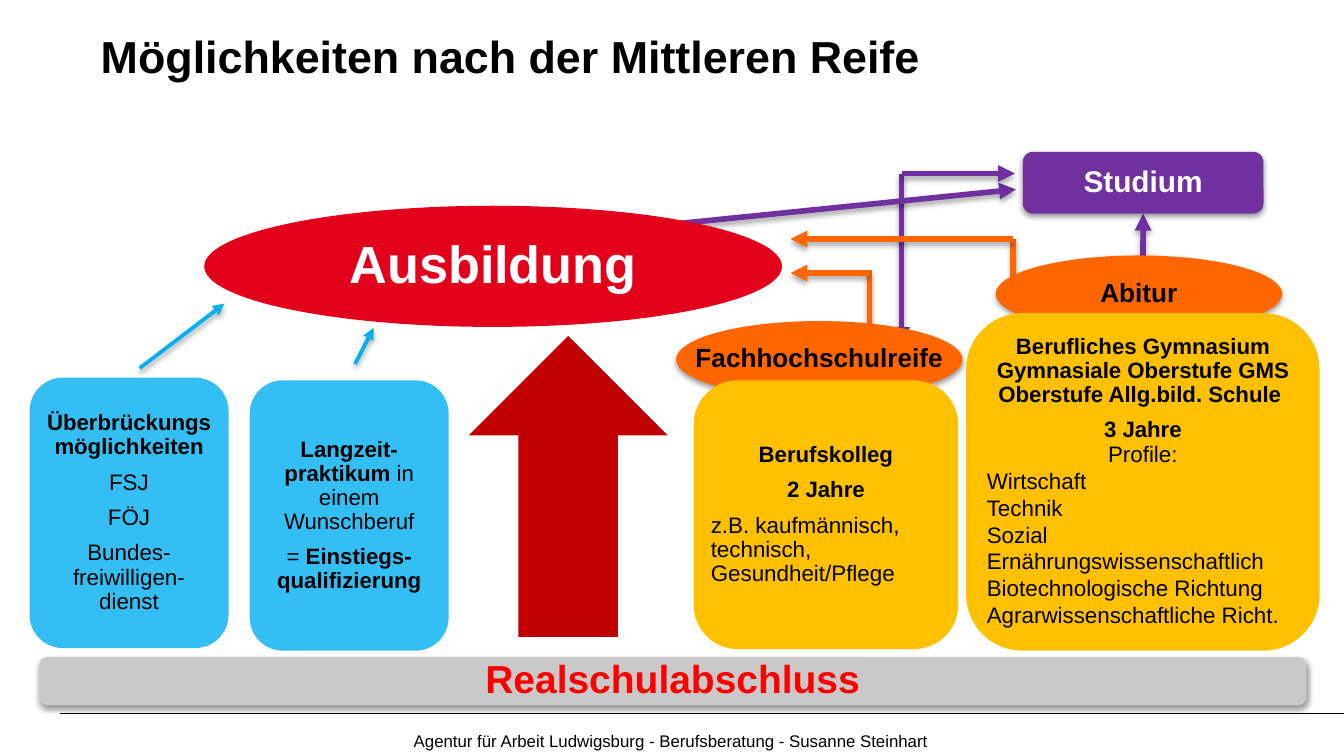
from lxml import etree
from pptx import Presentation
from pptx import util as u
from pptx.dml import color
from pptx.enum import shapes, text
from pptx.oxml import ns

BLACK = color.RGBColor(0x00, 0x00, 0x00)
WHITE = color.RGBColor(0xFF, 0xFF, 0xFF)
RED = color.RGBColor(0xFF, 0x00, 0x00)
CRIMSON = color.RGBColor(0xE2, 0x00, 0x1A)
DARK_RED = color.RGBColor(0xC0, 0x00, 0x00)
PURPLE = color.RGBColor(0x70, 0x30, 0xA0)
ORANGE = color.RGBColor(0xFF, 0x66, 0x00)
AMBER = color.RGBColor(0xFF, 0xC0, 0x00)
BLUE = color.RGBColor(0x00, 0xB0, 0xF0)
GREY = color.RGBColor(0xC9, 0xC9, 0xC9)

OVAL = shapes.MSO_SHAPE.OVAL
ROUNDED = shapes.MSO_SHAPE.ROUNDED_RECTANGLE
UP_ARROW = shapes.MSO_SHAPE.UP_ARROW
LEFT = text.PP_ALIGN.LEFT
CENTER = text.PP_ALIGN.CENTER


def write(tf, words, size=12, bold=False, rgb=BLACK, align=CENTER,
          spacing=0.9, before=6, after=0, join=False):
    first = len(tf.paragraphs) == 1 and not tf.paragraphs[0].runs
    p = tf.paragraphs[-1] if first or join else tf.add_paragraph()
    if not join:
        p.alignment = align
        p.line_spacing = spacing
        p.space_before = u.Pt(0 if first else before)
        p.space_after = u.Pt(after)
    for i, line in enumerate(words.split("\n")):
        if i:
            p.add_line_break()
        if line:
            r = p.add_run()
            r.text = line
            r.font.name = "Arial"
            r.font.size = u.Pt(size)
            r.font.bold = bold
            r.font.color.rgb = rgb


class Deck:
    def __init__(self, width, height):
        self.prs = Presentation()
        self.prs.slide_width = u.Cm(width)
        self.prs.slide_height = u.Cm(height)
        self.slide = self.prs.slides.add_slide(self.prs.slide_layouts[5])

    def title(self, words, x, y, w, h):
        sp = self.slide.shapes.title
        sp.left, sp.top, sp.width, sp.height = map(u.Cm, (x, y, w, h))
        tf = sp.text_frame
        tf.auto_size = text.MSO_AUTO_SIZE.NONE
        tf.vertical_anchor = text.MSO_ANCHOR.TOP
        write(tf, words, size=24, bold=True, align=LEFT, spacing=1, after=3.7)

    def label(self, words, x, y, w, h, size):
        sp = self.slide.shapes.add_textbox(*map(u.Cm, (x, y, w, h)))
        tf = sp.text_frame
        tf.word_wrap = True
        tf.vertical_anchor = text.MSO_ANCHOR.MIDDLE
        write(tf, words, size=size, align=LEFT, spacing=1)

    def shadow(self, effects, alpha, dist):
        shade = etree.SubElement(
            effects, ns.qn("a:outerShdw"), blurRad=str(u.Pt(3.1)),
            dist=str(u.Pt(dist)), dir="5400000", rotWithShape="0")
        rgb = etree.SubElement(shade, ns.qn("a:srgbClr"), val=str(BLACK))
        etree.SubElement(rgb, ns.qn("a:alpha"), val=str(alpha * 1000))

    def shape(self, kind, x, y, w, h, fill, alpha=100, shadow=False,
              inset=0.08, wrap=True):
        s = self.slide.shapes.add_shape(kind, *map(u.Cm, (x, y, w, h)))
        s.fill.solid()
        s.fill.fore_color.rgb = fill
        s.line.fill.background()
        s.shadow.inherit = False
        if alpha < 100:
            rgb = s.element.spPr.find(".//" + ns.qn("a:srgbClr"))
            etree.SubElement(rgb, ns.qn("a:alpha"), val=str(alpha * 1000))
        if shadow:
            self.shadow(s.element.spPr.find(ns.qn("a:effectLst")), 38, 1.6)
        tf = s.text_frame
        tf.word_wrap = wrap
        tf.vertical_anchor = text.MSO_ANCHOR.MIDDLE
        tf.margin_left = tf.margin_right = u.Cm(inset)
        tf.margin_top = tf.margin_bottom = u.Cm(inset)
        return s

    def banner(self, words, kind, x, y, w, h, fill, size, rgb=BLACK,
               shadow=True):
        s = self.shape(kind, x, y, w, h, fill, shadow=shadow, inset=0,
                       wrap=False)
        write(s.text_frame, words, size=size, bold=True, rgb=rgb)
        return s

    def line(self, x1, y1, x2, y2, rgb, width, arrow=True):
        c = self.slide.shapes.add_connector(
            shapes.MSO_CONNECTOR.STRAIGHT, *map(u.Cm, (x1, y1, x2, y2)))
        c.line.color.rgb = rgb
        c.line.width = u.Pt(width)
        props = c.element.spPr
        effects = etree.SubElement(props, ns.qn("a:effectLst"))
        if arrow:
            etree.SubElement(props.find(ns.qn("a:ln")), ns.qn("a:tailEnd"),
                             type="triangle")
            self.shadow(effects, 35, 1.8)
        return c


def main():
    d = Deck(25.4, 14.29)
    d.line(1.14, 13.49, 25.4, 13.49, BLACK, 0.5, arrow=False)

    d.line(17.04, 3.28, 17.04, 6.5, PURPLE, 3)
    d.line(12.4, 4.27, 19.2, 3.58, PURPLE, 3)
    to_studium = d.line(21.6, 5.36, 21.6, 4.04, PURPLE, 3)
    d.line(19.15, 4.52, 19.15, 5.77, ORANGE, 3)
    d.line(16.43, 5.11, 16.43, 6.58, ORANGE, 3)

    d.banner("Fachhochschulreife", OVAL, 12.78, 6.07, 5.41, 1.45, ORANGE, 14)
    d.banner("Abitur", OVAL, 18.82, 4.83, 5.41, 1.45, ORANGE, 14)
    d.banner("Ausbildung", OVAL, 3.86, 3.89, 10.92, 2.29, CRIMSON, 28,
             rgb=WHITE, shadow=False)

    tf = d.shape(ROUNDED, 13.11, 7.19, 5, 5.08, AMBER).text_frame
    write(tf, "Berufskolleg", size=11.9, bold=True)
    write(tf, "2 Jahre", size=11.9, bold=True)
    write(tf, "z.B. kaufmännisch, technisch, Gesundheit/Pflege", align=LEFT)

    studium = d.banner("Studium", ROUNDED, 19.33, 2.87, 4.55, 1.17, PURPLE,
                       16, rgb=WHITE)
    to_studium.end_connect(studium, 2)
    d.banner("Realschulabschluss", ROUNDED, 0.74, 12.42, 23.95, 0.91, GREY,
             20.9, rgb=RED)

    d.line(6.71, 6.88, 7.06, 6.2, BLUE, 2)
    d.line(16.43, 5.16, 14.94, 5.16, ORANGE, 3)

    tf = d.shape(ROUNDED, 0.56, 7.14, 3.76, 5.11, BLUE, alpha=80).text_frame
    write(tf, "Überbrückungsmöglichkeiten", size=11.9, bold=True)
    for words in ("FSJ", "FÖJ", "Bundes-\nfreiwilligen-\ndienst"):
        write(tf, words)

    d.line(2.64, 6.96, 4.24, 5.74, BLUE, 2)
    d.shape(UP_ARROW, 8.86, 6.35, 3.76, 5.69, DARK_RED)
    d.title("Möglichkeiten nach der Mittleren Reife", 1.65, 0.41, 22.86, 2.39)

    tf = d.shape(ROUNDED, 4.72, 7.19, 3.76, 5.11, BLUE, alpha=80).text_frame
    write(tf, "Langzeit-praktikum ", size=11.9, bold=True)
    write(tf, "in einem Wunschberuf", size=11.9, join=True)
    write(tf, "= ", size=11.9)
    write(tf, "Einstiegs-qualifizierung", size=11.9, bold=True, join=True)

    tf = d.shape(ROUNDED, 18.26, 5.92, 6.68, 6.38, AMBER).text_frame
    write(tf, "Berufliches Gymnasium\nGymnasiale Oberstufe GMS\n"
              "Oberstufe Allg.bild. Schule ", size=11.9, bold=True)
    write(tf, "3 Jahre\n", size=11.9, bold=True)
    write(tf, "Profile:", join=True)
    for profile in ("Wirtschaft", "Technik", "Sozial",
                    "Ernährungswissenschaftlich",
                    "Biotechnologische Richtung",
                    "Agrarwissenschaftliche Richt."):
        write(tf, profile, align=LEFT, spacing=1, before=0)

    d.line(19.15, 4.52, 14.94, 4.52, ORANGE, 3)
    d.label("Agentur für Arbeit Ludwigsburg - Berufsberatung - "
            "Susanne Steinhart", 7.57, 13.74, 15.65, 0.53, 9)
    d.line(17.04, 3.28, 19.18, 3.28, PURPLE, 3)

    d.prs.save("out.pptx")


if __name__ == "__main__":
    main()
